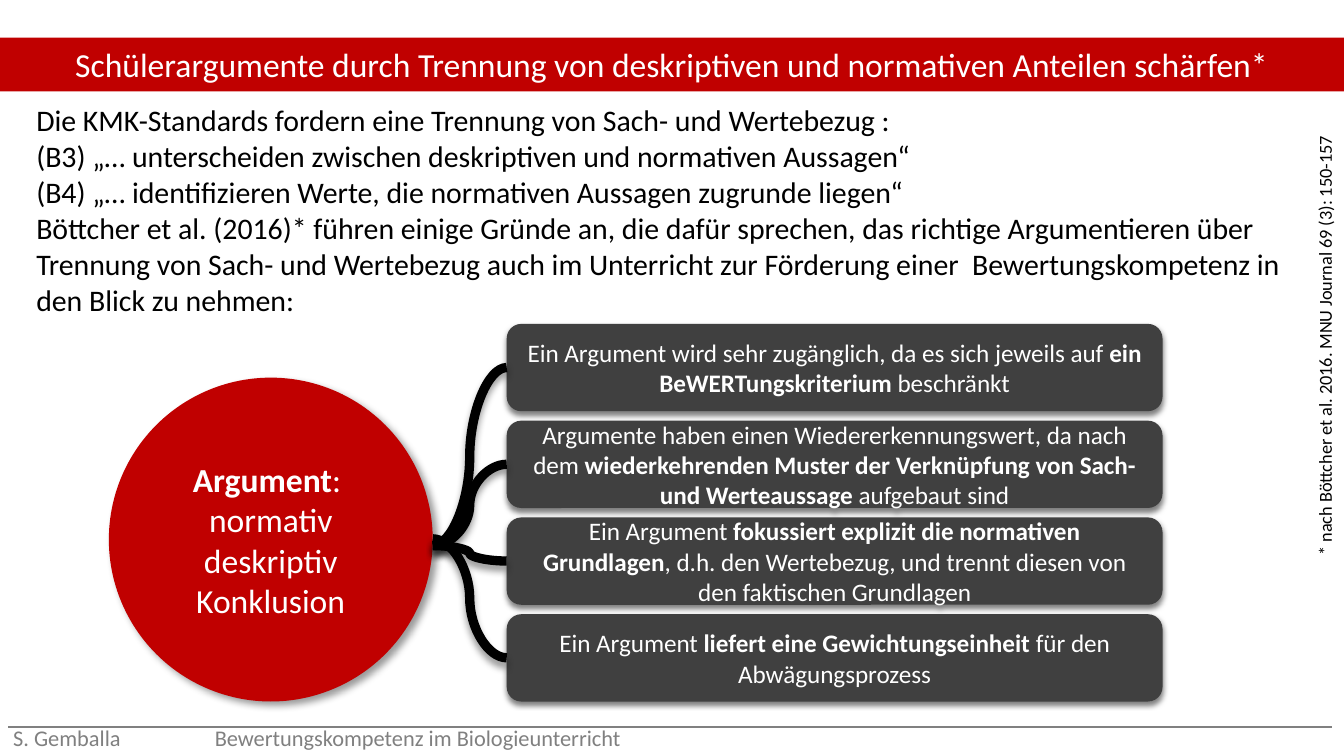
from lxml.etree import SubElement
from pptx import Presentation
from pptx.dml.color import RGBColor
from pptx.enum.shapes import MSO_CONNECTOR, MSO_SHAPE
from pptx.enum.text import MSO_ANCHOR, MSO_AUTO_SIZE, PP_ALIGN
from pptx.oxml.ns import qn
from pptx.util import Inches, Pt

COLORS = {"red": "C00000", "dark": "404040", "gray": "808080",
          "black": "000000", "white": "FFFFFF"}

# Content: a paragraph is a list of (text, bold) spans
TITLE = "Schülerargumente durch Trennung von deskriptiven und normativen Anteilen schärfen*"
INTRO = [
    "Die KMK-Standards fordern eine Trennung von Sach- und Wertebezug :",
    "(B3) „… unterscheiden zwischen deskriptiven und normativen Aussagen“",
    "(B4) „… identifizieren Werte, die normativen Aussagen zugrunde liegen“",
    "Böttcher et al. (2016)* führen einige Gründe an, die dafür sprechen, das richtige "
    "Argumentieren über Trennung von Sach- und Wertebezug auch im Unterricht zur "
    "Förderung einer  Bewertungskompetenz in den Blick zu nehmen:",
]
SOURCE = "* nach Böttcher et al. 2016. MNU Journal 69 (3): 150-157"
FOOTER = "S. Gemballa\tBewertungskompetenz im Biologieunterricht"
ARGUMENT = [[("Argument", True), (": ", False)],
            [("normativ deskriptiv", False)],
            [("Konklusion", False)]]
REASONS = [
    [("Ein Argument wird sehr zugänglich, da es sich jeweils auf ", False),
     ("ein BeWERTungskriterium ", True), ("beschränkt", False)],
    [("Argumente haben einen Wiedererkennungswert, da nach dem ", False),
     ("wiederkehrenden Muster der Verknüpfung von Sach- und Werteaussage ", True),
     ("aufgebaut sind", False)],
    [("Ein Argument ", False),
     ("fokussiert explizit die normativen Grundlagen", True),
     (", d.h. den Wertebezug, und trennt diesen von den faktischen Grundlagen", False)],
    [("Ein Argument ", False), ("liefert eine Gewichtungseinheit ", True),
     ("für den Abwägungsprozess", False)],
]

# Layout in inches
PAGE_WIDTH = 10
PAGE_HEIGHT = PAGE_WIDTH * 9 / 16
CIRCLE_LEFT, CIRCLE_TOP, CIRCLE_SIZE = 0.81, 2.81, 2.41
BOX_LEFT, BOX_TOP, BOX_WIDTH, BOX_HEIGHT, BOX_STEP = 3.77, 2.41, 4.88, 0.65, 0.72
HUB_X = CIRCLE_LEFT + CIRCLE_SIZE
HUB_YS = [4.06, 4.06, 4.06, 4.01]


def color(name):
    return RGBColor.from_string(COLORS[name])


def place(shape, left, top, width, height):
    shape.left, shape.top = Inches(left), Inches(top)
    shape.width, shape.height = Inches(width), Inches(height)


def write(shape, paragraphs, size, ink="black", align=PP_ALIGN.LEFT, anchor=MSO_ANCHOR.TOP):
    frame = shape.text_frame
    frame.word_wrap = True
    frame.auto_size = MSO_AUTO_SIZE.NONE
    frame.vertical_anchor = anchor
    for index, spans in enumerate(paragraphs):
        para = frame.add_paragraph() if index else frame.paragraphs[0]
        para.alignment = align
        para.space_before = Pt(0)
        for text, bold in spans:
            span = para.add_run()
            span.text = text
            span.font.name, span.font.size, span.font.bold = "Calibri", Pt(size), bold
            span.font.color.rgb = color(ink)


def plain(*texts):
    return [[(text, False)] for text in texts]


def add_shadow(shape, ink, opacity, blur, distance, angle):
    properties = shape._element.spPr
    for old in properties.findall(qn("a:effectLst")):
        properties.remove(old)
    effects = SubElement(properties, qn("a:effectLst"))
    shadow = SubElement(effects, qn("a:outerShdw"), blurRad=str(Pt(blur)),
                        dist=str(Pt(distance)), dir=str(angle * 60000), rotWithShape="0")
    shade = SubElement(shadow, qn("a:srgbClr"), val=COLORS[ink])
    SubElement(shade, qn("a:alpha"), val=str(opacity * 1000))


def add_filled(page, kind, bounds, fill):
    shape = page.shapes.add_shape(kind, *map(Inches, bounds))
    shape.fill.solid()
    shape.fill.fore_color.rgb = color(fill)
    shape.line.fill.background()
    return shape


def add_line(page, kind, start, end, ink, width):
    line = page.shapes.add_connector(kind, *map(Inches, start + end))
    line.line.color.rgb = color(ink)
    line.line.width = Pt(width)
    SubElement(line._element.spPr, qn("a:effectLst"))
    return line


def add_note(page, text, bounds, size, **style):
    box = page.shapes.add_textbox(*map(Inches, bounds))
    write(box, plain(text), size, **style)
    return box


deck = Presentation()
deck.slide_width, deck.slide_height = Inches(PAGE_WIDTH), Inches(PAGE_HEIGHT)
page = deck.slides.add_slide(deck.slide_layouts[1])
title, body = page.placeholders

# Title band
place(title, 0, 0.28, PAGE_WIDTH, 0.4)
title.fill.solid()
title.fill.fore_color.rgb = color("red")
write(title, plain(TITLE), 18, ink="white", align=PP_ALIGN.CENTER, anchor=MSO_ANCHOR.MIDDLE)

# Introduction without bullets
place(body, 0.17, 0.71, 9.56, 1.72)
write(body, plain(*INTRO), 16)
for para in body.text_frame.paragraphs:
    settings = para._p.get_or_add_pPr()
    settings.set("marL", "0")
    settings.set("indent", "0")
    SubElement(settings, qn("a:buNone"))

# Footer with a tab stop, and its rule
footer = add_note(page, FOOTER, (0, 5.34, PAGE_WIDTH, 0.28), 12, ink="gray")
tabs = SubElement(footer.text_frame.paragraphs[0]._p.get_or_add_pPr(), qn("a:tabLst"))
SubElement(tabs, qn("a:tab"), pos=str(Inches(1.5)), algn="l")
add_line(page, MSO_CONNECTOR.STRAIGHT, (0.06, 5.41), (9.91, 5.41), "gray", 1)

# Source, reading upwards
source = add_note(page, SOURCE, (7.92, 2.72, 3.88, 0.27), 9.75, align=PP_ALIGN.RIGHT)
source.rotation = 270

# Argument circle
circle = add_filled(page, MSO_SHAPE.OVAL,
                    (CIRCLE_LEFT, CIRCLE_TOP, CIRCLE_SIZE, CIRCLE_SIZE), "red")
add_shadow(circle, "black", 40, 4, 3, 45)
write(circle, ARGUMENT, 18, ink="white", align=PP_ALIGN.CENTER, anchor=MSO_ANCHOR.MIDDLE)

# Reasons, each joined to the circle
for index, (reason, hub_y) in enumerate(zip(REASONS, HUB_YS)):
    top = BOX_TOP + index * BOX_STEP
    box = add_filled(page, MSO_SHAPE.ROUNDED_RECTANGLE,
                     (BOX_LEFT, top, BOX_WIDTH, BOX_HEIGHT), "dark")
    add_shadow(box, "gray", 100, 3.1, 1.8, 90)
    write(box, [reason], 13.5, ink="white", align=PP_ALIGN.CENTER, anchor=MSO_ANCHOR.MIDDLE)
    branch = add_line(page, MSO_CONNECTOR.CURVE, (HUB_X, hub_y),
                      (BOX_LEFT, top + BOX_HEIGHT / 2), "black", 5)
    add_shadow(branch, "black", 40, 4, 3, 90)

deck.save("out.pptx")
